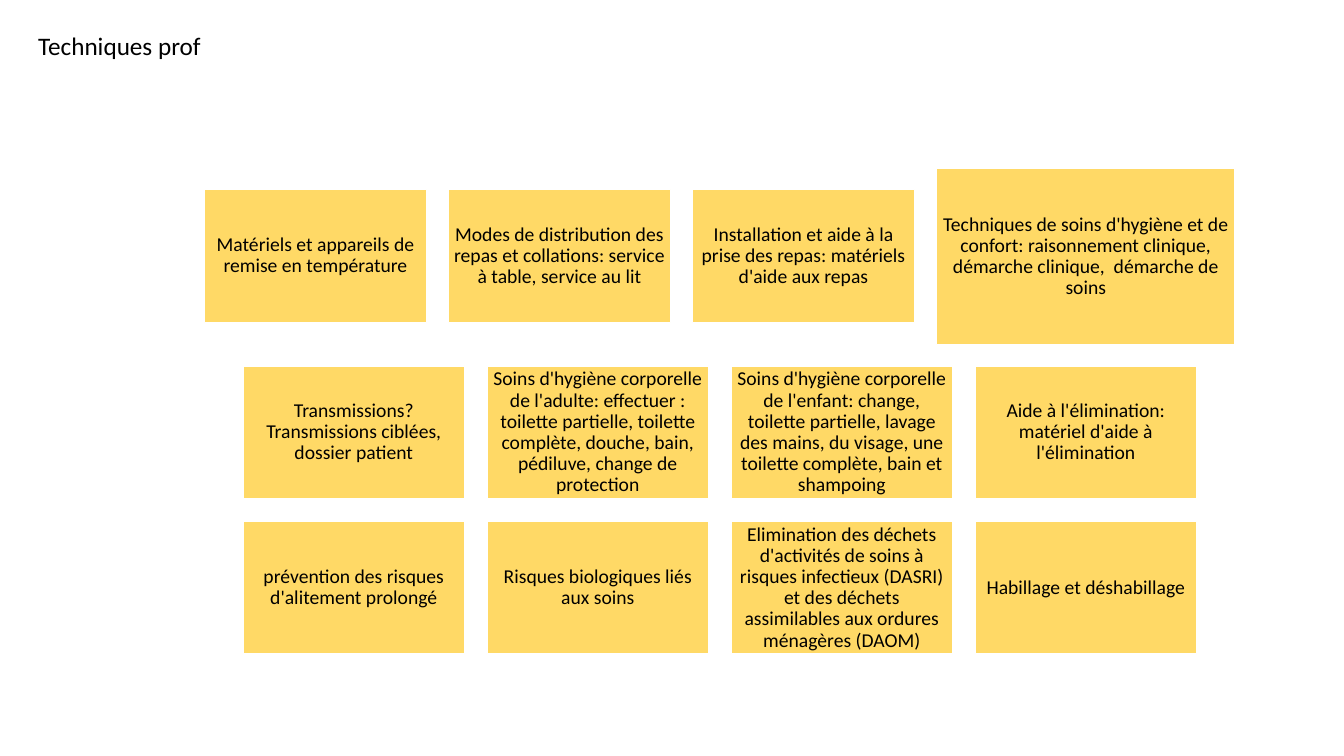
import pptx
import pptx.util
import pptx.dml.color
import pptx.enum.shapes
import pptx.enum.text

PX = 9144  # 100 px to the inch
COLORS = {"card": "FFD966", "edge": "FFFFFF", "text": "000000"}
ALIGN = pptx.enum.text.PP_ALIGN
ANCHOR = pptx.enum.text.MSO_ANCHOR


def rgb(name):
    return pptx.dml.color.RGBColor.from_string(COLORS[name])


def write(shape, text, size=14, align=ALIGN.CENTER, anchor=ANCHOR.MIDDLE,
          inset=(5, 5), spacing=0.9):
    frame = shape.text_frame
    frame.word_wrap = True
    frame.vertical_anchor = anchor
    frame.margin_left = frame.margin_right = inset[0] * PX
    frame.margin_top = frame.margin_bottom = inset[1] * PX
    para = frame.paragraphs[0]
    para.alignment = align
    para.line_spacing = spacing
    run = para.add_run()
    run.text = text
    run.font.name = "Calibri"
    run.font.size = pptx.util.Pt(size)
    run.font.color.rgb = rgb("text")


deck = pptx.Presentation()
deck.slide_width = 1333 * PX
deck.slide_height = 750 * PX
slide = deck.slides.add_slide(deck.slide_layouts[6])

# Cards: each row is centred on MID, cards are centred within their row
WIDE, HIGH, GAP, MID = 220, 132, 22, 714
BIG = (296, 175)
rows = [
    (254, [
        "Matériels et appareils de remise en température",
        "Modes de distribution des repas et collations: service à table, service au lit",
        "Installation et aide à la prise des repas: matériels d'aide aux repas",
        "Techniques de soins d'hygiène et de confort: raisonnement clinique, "
        "démarche clinique,  démarche de soins",
    ]),
    (429, [
        "Transmissions? Transmissions ciblées, dossier patient",
        "Soins d'hygiène corporelle de l'adulte: effectuer : toilette partielle, "
        "toilette complète, douche, bain, pédiluve, change de protection",
        "Soins d'hygiène corporelle de l'enfant: change, toilette partielle, lavage "
        "des mains, du visage, une toilette complète, bain et shampoing",
        "Aide à l'élimination: matériel d'aide à l'élimination",
    ]),
    (583, [
        "prévention des risques d'alitement prolongé",
        "Risques biologiques liés aux soins",
        "Elimination des déchets d'activités de soins à risques infectieux (DASRI) "
        "et des déchets assimilables aux ordures ménagères (DAOM)",
        "Habillage et déshabillage",
    ]),
]

for row, (center, labels) in enumerate(rows):
    sizes = [(WIDE, HIGH)] * len(labels)
    if row == 0:
        sizes[-1] = BIG
    total = sum(wide for wide, high in sizes) + GAP * (len(sizes) - 1)
    left = MID - total // 2
    for label, (wide, high) in zip(labels, sizes):
        top = center - high // 2
        card = slide.shapes.add_shape(
            pptx.enum.shapes.MSO_SHAPE.RECTANGLE,
            left * PX, top * PX, wide * PX, high * PX)
        card.shadow.inherit = False
        card.fill.solid()
        card.fill.fore_color.rgb = rgb("card")
        card.line.color.rgb = rgb("edge")
        card.line.width = pptx.util.Pt(1)
        write(card, label)
        left += wide + GAP

# Title
title = slide.shapes.add_textbox(28 * PX, 25 * PX, 323 * PX, 40 * PX)
write(title, "Techniques prof", size=18, align=ALIGN.LEFT, anchor=ANCHOR.TOP,
      inset=(10, 5), spacing=1.0)

deck.save("out.pptx")
